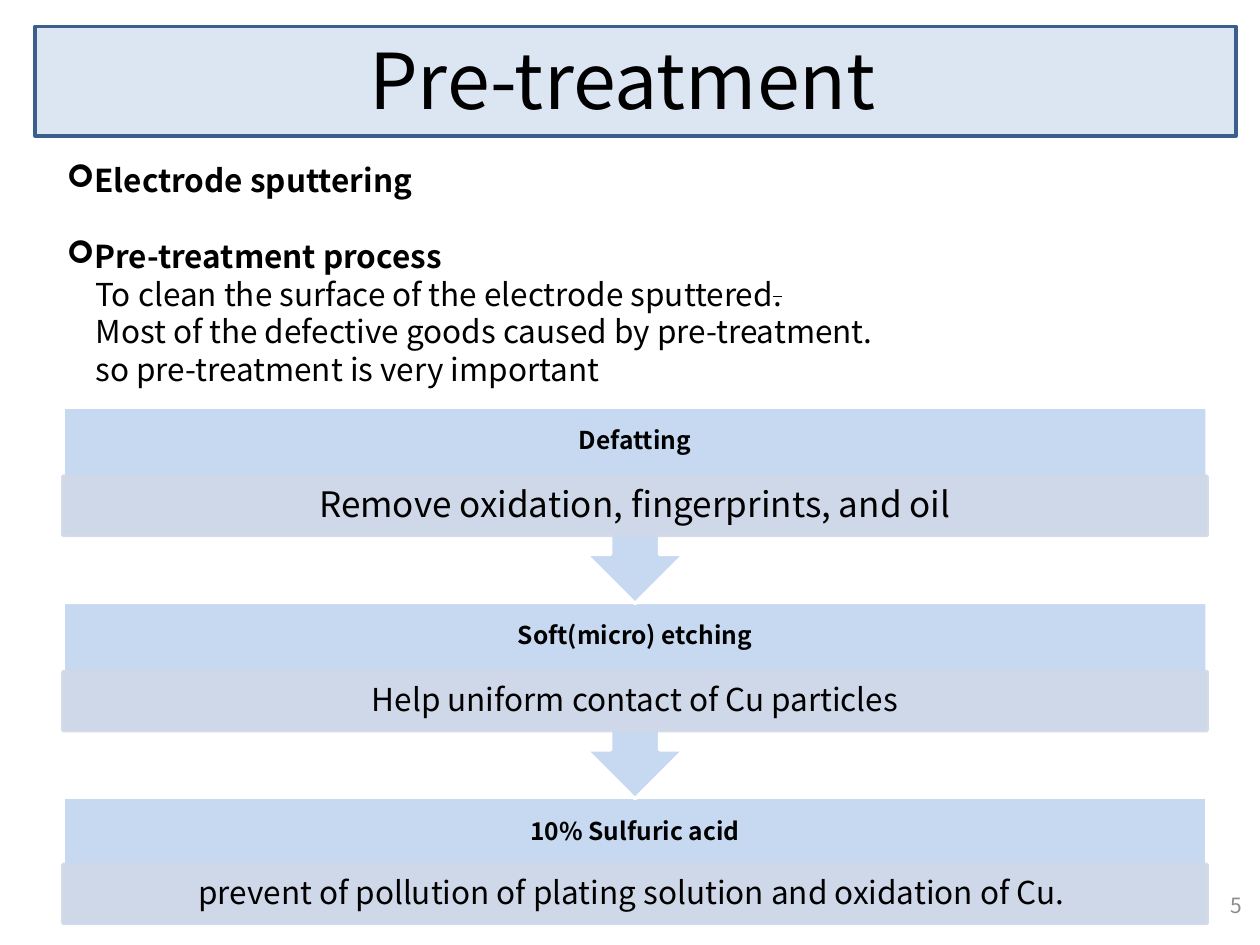
from lxml import etree
from pptx import Presentation
from pptx.dml.color import RGBColor
from pptx.enum.shapes import MSO_SHAPE
from pptx.enum.text import MSO_ANCHOR, PP_ALIGN
from pptx.oxml.ns import qn
from pptx.util import Inches, Pt

RECTANGLE = MSO_SHAPE.RECTANGLE
ARROW_CALLOUT = MSO_SHAPE.UP_ARROW_CALLOUT
TOP, MIDDLE = MSO_ANCHOR.TOP, MSO_ANCHOR.MIDDLE
LEFT, CENTER, RIGHT = PP_ALIGN.LEFT, PP_ALIGN.CENTER, PP_ALIGN.RIGHT

FONT = "Noto Sans CJK KR"
COLORS = {
    "ink": "000000", "white": "FFFFFF", "number": "8C8C8C",
    "banner": "DCE6F2", "banner_line": "3A5F8C",
    "step": "C6D9F1", "detail": "D0D8E8",
}
COLUMNS, ROWS = 100, 75  # grid over the whole slide


def color(name):
    return RGBColor.from_string(COLORS[name])


def add_span(para, text, size=18, bold=False, ink="ink", strike=False):
    span = para.add_run()
    span.text = text
    span.font.name = FONT
    span.font.size = Pt(size)
    span.font.bold = bold
    span.font.color.rgb = color(ink)
    if strike:
        span.font._element.set("strike", "sngStrike")
    return span


class SlideBuilder:
    def __init__(self, deck):
        self.deck = deck
        self.page = deck.slides.add_slide(deck.slide_layouts[5])

    def place(self, left, top, width, height):
        across, down = self.deck.slide_width / COLUMNS, self.deck.slide_height / ROWS
        return [round(left * across), round(top * down),
                round(width * across), round(height * down)]

    def frame(self, box, anchor=TOP, insets=(0.1, 0.05)):
        frame = box.text_frame
        frame.word_wrap = True
        frame.vertical_anchor = anchor
        frame.margin_left = frame.margin_right = Inches(insets[0])
        frame.margin_top = frame.margin_bottom = Inches(insets[1])
        return frame

    def line(self, frame, text, align=CENTER, spacing=None, **style):
        para = frame.paragraphs[0]
        para.alignment = align
        para.line_spacing = spacing
        add_span(para, text, **style)

    def title(self, text, area):
        box = self.page.shapes.title
        box.left, box.top, box.width, box.height = self.place(*area)
        self.line(self.frame(box, MIDDLE), text, size=44)

    def text(self, area, anchor=TOP, insets=(0.1, 0.05)):
        box = self.page.shapes.add_textbox(*self.place(*area))
        return self.frame(box, anchor, insets)

    def shape(self, kind, area, fill, line, alpha=None):
        box = self.page.shapes.add_shape(kind, *self.place(*area))
        box.shadow.inherit = False
        box.fill.solid()
        box.fill.fore_color.rgb = color(fill)
        box.line.color.rgb = color(line)
        box.line.width = Pt(2)
        if alpha:
            for tint in box._element.spPr.iter(qn("a:srgbClr")):
                etree.SubElement(tint, qn("a:alpha"), val=str(alpha * 1000))
        return box

    def banner(self, area):
        box = self.shape(RECTANGLE, area, "banner", "banner_line")
        self.page.shapes._spTree.insert(2, box._element)  # behind the title

    def bullets(self, area, items):
        frame = self.text(area)
        for index, (bullet, before, spans) in enumerate(items):
            para = frame.paragraphs[0] if index == 0 else frame.add_paragraph()
            para.alignment = LEFT
            para.space_before = Pt(before)
            indent = Inches(0.21 if bullet else 0.23)
            properties = para._p.get_or_add_pPr()
            properties.set("marL", str(indent))
            properties.set("indent", str(-indent if bullet else 0))
            if bullet:
                etree.SubElement(properties, qn("a:buFont"), typeface="Wingdings")
                etree.SubElement(properties, qn("a:buChar"), char="➢")
            for text, strike in spans:
                add_span(para, text, bold=bullet, strike=strike)

    def step(self, top, heading, detail, size, last):
        left, width = 5, 90.8
        heading_height = 5.3 if last else 5.5
        if last:
            self.shape(RECTANGLE, (left, top, width, 10.2), "step", "white")
        else:
            callout = self.shape(ARROW_CALLOUT, (left, top, width, 15.6), "step", "white")
            callout.rotation = 180
        frame = self.text((left, top, width, 5.5), MIDDLE, (0.11, 0.11))
        self.line(frame, heading, spacing=0.9, size=14, bold=True)
        box = self.shape(RECTANGLE, (left, top + heading_height, width, 4.7),
                         "detail", "detail", alpha=90)
        self.line(self.frame(box, MIDDLE, (0.14, 0.03)), detail, spacing=0.9, size=size)


def main():
    deck = Presentation()
    deck.slide_width, deck.slide_height = Inches(10), Inches(7.5)
    slide = SlideBuilder(deck)

    # Title on its banner
    slide.banner((2.8, 2.1, 95.3, 8.7))
    slide.title("Pre-treatment ", (5.1, 0, 90, 12.5))

    # Introduction: bullet, points before, spans with strike
    slide.bullets((4.3, 12.3, 95.3, 19.2), [
        (True, 0, [("Electrode sputtering", False)]),
        (True, 21.6, [("Pre-treatment process", False)]),
        (False, 0, [("To clean the surface of the electrode sputtered", False), (".", True)]),
        (False, 0, [("Most of the defective goods caused by pre-treatment.", False)]),
        (False, 0, [("so pre-treatment is very important", False)]),
    ])

    # Process steps, drawn from the last one up
    steps = [
        ("Defatting", "Remove oxidation, fingerprints, and oil", 20),
        ("Soft(micro) etching", "Help uniform contact of Cu particles", 18),
        ("10% Sulfuric acid",
         "prevent of pollution of plating solution and oxidation of Cu. ", 18),
    ]
    for index in reversed(range(len(steps))):
        slide.step(32.3 + 15.5 * index, *steps[index], last=index == len(steps) - 1)

    # Page number
    number = slide.text((76.3, 69.8, 23.3, 4), MIDDLE)
    slide.line(number, "5", align=RIGHT, size=12, ink="number")

    deck.save("out.pptx")


if __name__ == "__main__":
    main()
